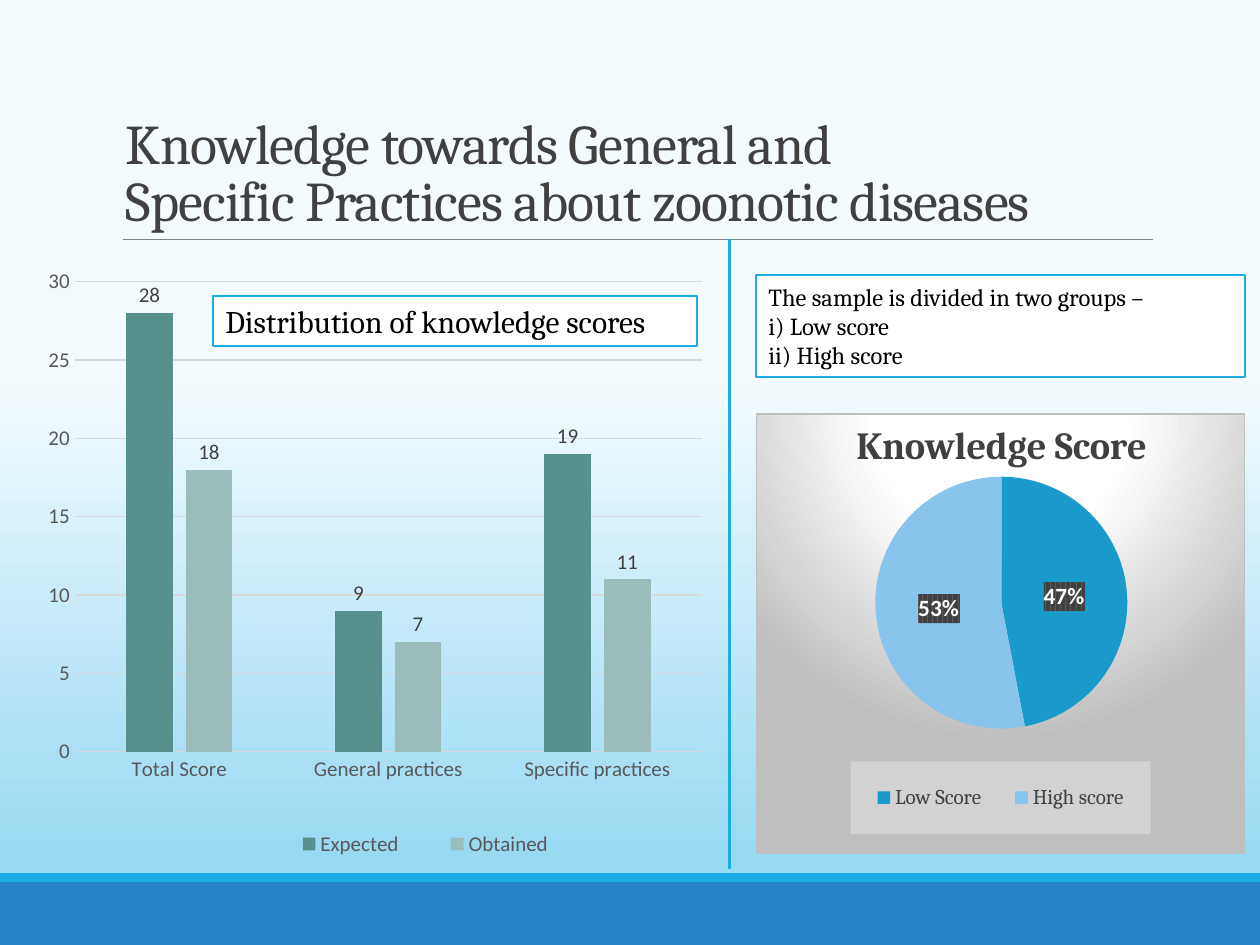
from lxml.etree import SubElement
from pptx import Presentation
from pptx.chart.data import CategoryChartData
from pptx.dml.color import RGBColor
from pptx.enum.chart import XL_CHART_TYPE, XL_LABEL_POSITION, XL_LEGEND_POSITION, XL_TICK_MARK
from pptx.enum.shapes import MSO_CONNECTOR, MSO_SHAPE
from pptx.enum.text import MSO_ANCHOR, PP_ALIGN
from pptx.oxml import parse_xml
from pptx.oxml.ns import nsdecls, qn
from pptx.util import Inches, Pt

TITLE = "Knowledge towards General and \vSpecific Practices about zoonotic diseases"
BANDS = [((0, 7, 10, 0.5), "2683C6"), ((0, 6.93, 10, 0.07), "1CADE4")]
RULES = [((0.98, 1.9, 9.15, 1.9), "808080", 0.5), ((5.79, 1.9, 5.79, 6.9), "1CADE4", 2.25)]
GROUPS = ((6, 2.18, 3.88, 0.81), "The sample is divided in two groups – \vi) Low score\vii) High score", 14)
CAPTION = ((1.69, 2.35, 3.84, 0.4), "Distribution of knowledge scores", 18)
BACKGROUND = [(40, "F4FBFE"), (90, "99DAF3"), (100, "99DAF3"), (100, "BBE6F7")]
DOWNWARD = '<a:lin ang="5400000" scaled="0"/>'
PIE_BACKGROUND = [(0, "FFFFFF"), (39, "FFFFFF"), (100, "BFBFBF")]
FROM_TOP = '<a:path path="circle"><a:fillToRect l="50000" t="-80000" r="50000" b="180000"/></a:path>'

SCORES = {
    "at": (0.06, 1.88, 6.2, 5.02),
    "categories": ["Total Score", "General practices", "Specific practices"],
    "series": [("Expected", [28, 9, 19], "57918D"), ("Obtained", [18, 7, 11], "9ABDBB")],
    "plot": (0.086, 0.071, 0.803, 0.743),
    "legend": (0.32, 0.925, 0.43, 0.07),
}
SHARES = {
    "at": (6, 3.28, 3.88, 3.5),
    "categories": ["Low Score", "High score"],
    "series": [("Knowledge Score", [47, 53], None)],
    "colors": ["199ACA", "88C4EB"],
    "plot": (0.211, 0.143, 0.582, 0.573),
    "title": (0.19, 0),
    "legend": (0.193, 0.79, 0.615, 0.166),
}


def rgb(value):
    return RGBColor.from_string(value)


def set_font(font, size, color, name="Calibri", bold=False):
    font.size, font.name, font.bold = Pt(size), name, bold
    font.color.rgb = rgb(color)


def gradient(stops, direction):
    marks = "".join(f'<a:gs pos="{share * 1000}"><a:srgbClr val="{color}"/></a:gs>'
                    for share, color in stops)
    return f'<a:gradFill {nsdecls("a")} rotWithShape="1"><a:gsLst>{marks}</a:gsLst>{direction}</a:gradFill>'


def chart_format(content):
    return parse_xml(f'<c:spPr {nsdecls("c", "a")}>{content}</c:spPr>')


def manual_layout(left, top, width=None, height=None, inner=False):
    values = [("layoutTarget", "inner")] if inner else []
    values += [("xMode", "edge"), ("yMode", "edge"), ("x", left), ("y", top)]
    if width:
        values += [("w", width), ("h", height)]
    layout = parse_xml(f'<c:layout {nsdecls("c")}><c:manualLayout/></c:layout>')
    for tag, value in values:
        SubElement(layout[0], qn(f"c:{tag}")).set("val", str(value))
    return layout


def replace_layout(parent, layout, following):
    """Put the layout where the schema wants it, ahead of the following child."""
    for old in parent.findall(qn("c:layout")):
        parent.remove(old)
    following.addprevious(layout)


def add_box(slide, at, fill, line=None):
    box = slide.shapes.add_shape(MSO_SHAPE.RECTANGLE, *map(Inches, at))
    box.shadow.inherit = False
    box.fill.solid()
    box.fill.fore_color.rgb = rgb(fill)
    if line:
        box.line.color.rgb = rgb(line)
        box.line.width = Pt(1.25)
    else:
        box.line.fill.background()
    return box


def add_note(slide, at, text, size):
    frame = add_box(slide, at, "FFFFFF", "1CADE4").text_frame
    frame.word_wrap = True
    frame.vertical_anchor = MSO_ANCHOR.MIDDLE
    frame.text = text
    para = frame.paragraphs[0]
    para.alignment = PP_ALIGN.LEFT
    for span in para.runs:
        set_font(span.font, size, "000000", "Cambria")


def add_rule(slide, ends, color, width):
    rule = slide.shapes.add_connector(MSO_CONNECTOR.STRAIGHT, *map(Inches, ends))
    rule.line.color.rgb = rgb(color)
    rule.line.width = Pt(width)
    SubElement(rule._element.spPr, qn("a:effectLst"))


def add_title(slide):
    box = slide.shapes.add_textbox(*map(Inches, (0.9, 0.31, 8.25, 1.59)))
    frame = box.text_frame
    frame.word_wrap = True
    frame.vertical_anchor = MSO_ANCHOR.BOTTOM
    frame.text = TITLE
    para = frame.paragraphs[0]
    para.line_spacing = 0.85
    for span in para.runs:
        set_font(span.font, 32, "404040", "Cambria")
        span.font._element.set("spc", "-50")


def add_chart(slide, kind, content, legend_color, legend_font):
    """Add a chart with its plot area and legend placed by shares of its frame."""
    data = CategoryChartData()
    data.categories = content["categories"]
    for name, values, _ in content["series"]:
        data.add_series(name, values)
    chart = slide.shapes.add_chart(kind, *map(Inches, content["at"]), data).chart
    chart.font.name = "Calibri"
    chart.has_title = False
    chart.has_legend = True
    legend = chart.legend
    legend.position = XL_LEGEND_POSITION.BOTTOM
    legend.include_in_layout = False
    set_font(legend.font, 12, legend_color, legend_font)
    replace_layout(legend._element, manual_layout(*content["legend"]),
                   legend._element.find(qn("c:overlay")))
    plot = chart.plots[0]._element
    replace_layout(plot.getparent(), manual_layout(*content["plot"], inner=True), plot)
    return chart


def add_scores(slide):
    chart = add_chart(slide, XL_CHART_TYPE.COLUMN_CLUSTERED, SCORES, "595959", "Calibri")
    plot = chart.plots[0]
    plot.vary_by_categories = False
    plot.gap_width, plot.overlap = 219, -27
    for series, (_, _, color) in zip(plot.series, SCORES["series"]):
        series.format.fill.solid()
        series.format.fill.fore_color.rgb = rgb(color)
        labels = series.data_labels
        labels.show_value = True
        labels.position = XL_LABEL_POSITION.OUTSIDE_END
        set_font(labels.font, 12, "404040")
    for axis in (chart.category_axis, chart.value_axis):
        axis.major_tick_mark = axis.minor_tick_mark = XL_TICK_MARK.NONE
        set_font(axis.tick_labels.font, 12, "595959")
    values = chart.value_axis
    values.minimum_scale, values.maximum_scale, values.major_unit = 0, 30, 5
    values.format.line.fill.background()
    for line in (chart.category_axis.format.line, values.major_gridlines.format.line):
        line.color.rgb = rgb("D9D9D9")
        line.width = Pt(0.75)


def add_shares(slide):
    chart = add_chart(slide, XL_CHART_TYPE.PIE, SHARES, "404040", "Cambria")
    chart.has_title = True
    title = chart.chart_title
    title.text_frame.text = "Knowledge Score"
    set_font(title.text_frame.paragraphs[0].runs[0].font, 22, "404040", "Cambria", True)
    title.include_in_layout = True
    replace_layout(title._element, manual_layout(*SHARES["title"]),
                   title._element.find(qn("c:overlay")))

    series = chart.plots[0].series[0]
    for index, color in enumerate(SHARES["colors"]):
        fill = series.points[index].format.fill
        fill.solid()
        fill.fore_color.rgb = rgb(color)
    labels = series.data_labels
    labels.show_percentage, labels.show_value = True, False
    labels.position = XL_LABEL_POSITION.CENTER
    set_font(labels.font, 13.3, "FFFFFF", bold=True)
    labels._element.find(qn("c:txPr")).addprevious(chart_format(
        '<a:pattFill prst="dkVert"><a:fgClr><a:srgbClr val="404040"/></a:fgClr>'
        '<a:bgClr><a:srgbClr val="595959"/></a:bgClr></a:pattFill>'))
    chart.legend._element.find(qn("c:txPr")).addprevious(chart_format(
        '<a:solidFill><a:srgbClr val="F2F2F2"><a:alpha val="39000"/></a:srgbClr></a:solidFill>'))
    chart._chartSpace.find(qn("c:chart")).addnext(chart_format(
        gradient(PIE_BACKGROUND, FROM_TOP)
        + '<a:ln w="9525"><a:solidFill><a:srgbClr val="BFBFBF"/></a:solidFill></a:ln>'))


def main():
    deck = Presentation()
    deck.slide_width, deck.slide_height = Inches(10), Inches(7.5)
    slide = deck.slides.add_slide(deck.slide_layouts[6])
    slide.background.fill.solid()
    solid = slide._element.find(".//" + qn("p:bgPr"))[0]
    solid.getparent().replace(solid, parse_xml(gradient(BACKGROUND, DOWNWARD)))
    for at, color in BANDS:
        add_box(slide, at, color)
    add_title(slide)
    add_scores(slide)
    add_note(slide, *GROUPS)
    add_shares(slide)
    add_note(slide, *CAPTION)
    for rule in RULES:
        add_rule(slide, *rule)
    deck.save("out.pptx")


if __name__ == "__main__":
    main()
